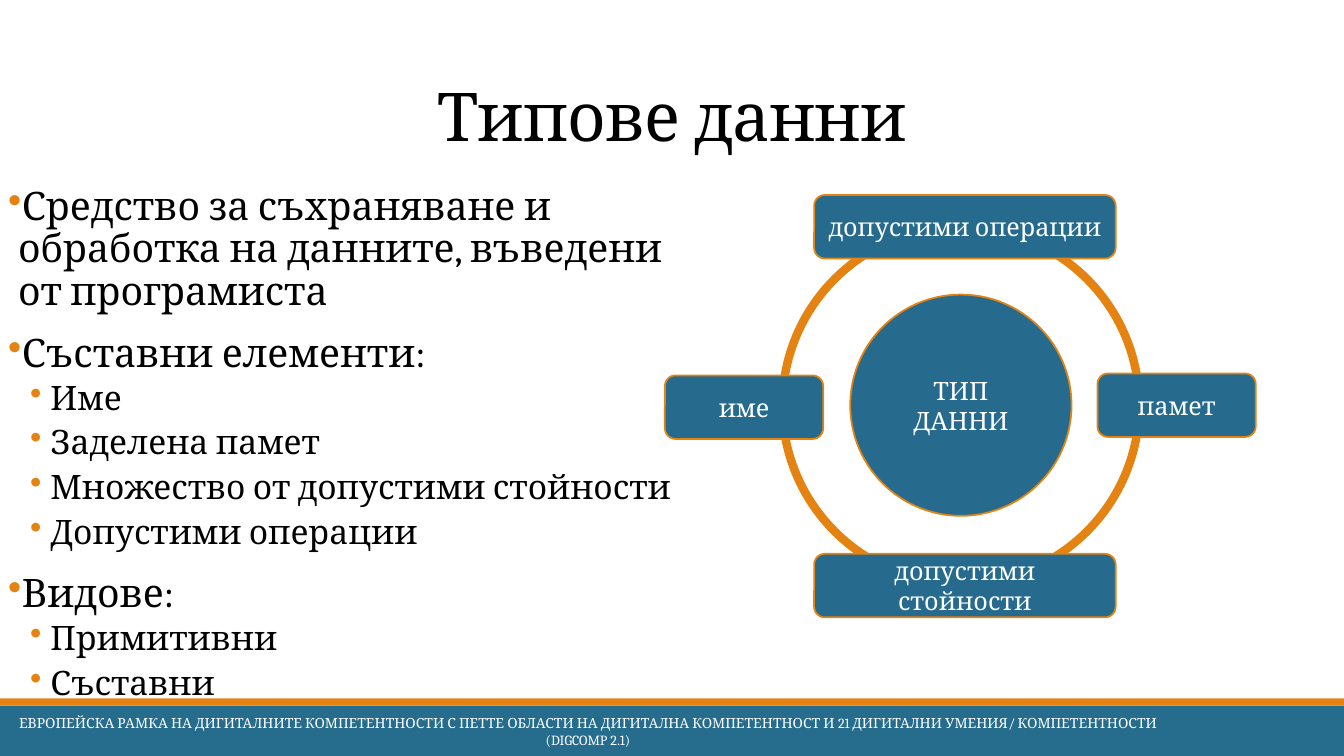
from collections import namedtuple

from lxml.etree import SubElement
from pptx import Presentation
from pptx.dml.color import RGBColor
from pptx.enum.shapes import MSO_SHAPE as Preset
from pptx.enum.text import MSO_ANCHOR as Anchor, PP_ALIGN as Align
from pptx.oxml.ns import qn
from pptx.util import Inches, Pt

WIDTH, HEIGHT = 13.33, 7.5
FONT = "Cambria"
COLORS = {
    "band": "256C8D", "stripe": "E48312", "node": "266B8D",
    "outline": "E58312", "dark": "000000", "light": "FFFFFF",
}
Box = namedtuple("Box", "left top width height")
# Indents in inches, sizes and spacing in points
Level = namedtuple("Level", "size margin indent before after")
LEVELS = [Level(28, 0.1, -0.16, 12, 2), Level(24, 0.42, -0.2, 2, 4)]

OUTLINE = [
    (0, "Средство за съхраняване и обработка на данните, въведени от програмиста"),
    (0, "Съставни елементи:"),
    (1, "Име"),
    (1, "Заделена памет"),
    (1, "Множество от допустими стойности"),
    (1, "Допустими операции"),
    (0, "Видове:"),
    (1, "Примитивни"),
    (1, "Съставни"),
]
FOOTER = ("ЕВРОПЕЙСКА РАМКА НА ДИГИТАЛНИТЕ КОМПЕТЕНТНОСТИ С ПЕТТЕ ОБЛАСТИ НА "
          "ДИГИТАЛНА КОМПЕТЕНТНОСТ И 21 ДИГИТАЛНИ УМЕНИЯ/ КОМПЕТЕНТНОСТИ (DIGCOMP 2.1)")
# Label, width, and offset of its centre from the ring's centre
RING_LABELS = [
    ("допустими операции", 2.99, 0.04, -1.77),
    ("допустими стойности", 2.99, 0.04, 1.79),
    ("памет", 1.57, 2.14, 0),
    ("име", 1.57, -2.15, 0.02),
]


def rgb(name):
    return RGBColor.from_string(COLORS[name])


def emu(box):
    return [Inches(length) for length in box]


def centred(x, y, width, height):
    return Box(x - width / 2, y - height / 2, width, height)


def add_run(para, text, size, color):
    run = para.add_run()
    run.text = text
    run.font.name = FONT
    run.font.size = Pt(size)
    run.font.color.rgb = rgb(color)
    return run


def add_text_frame(slide, box, anchor=Anchor.TOP, inset=None):
    frame = slide.shapes.add_textbox(*emu(box)).text_frame
    frame.word_wrap = True
    frame.vertical_anchor = anchor
    if inset is not None:
        frame.margin_left = frame.margin_right = Inches(inset)
        frame.margin_top = frame.margin_bottom = Inches(inset)
    return frame


def add_panel(slide, preset, box, fill=None, line=None, weight=1.25):
    shape = slide.shapes.add_shape(preset, *emu(box))
    shape.shadow.inherit = False
    if fill:
        shape.fill.solid()
        shape.fill.fore_color.rgb = rgb(fill)
    else:
        shape.fill.background()
    if line:
        shape.line.color.rgb = rgb(line)
        shape.line.width = Pt(weight)
    else:
        shape.line.fill.background()
    return shape


def add_node(slide, preset, box, text):
    frame = add_panel(slide, preset, box, "node", "outline").text_frame
    frame.word_wrap = True
    frame.vertical_anchor = Anchor.MIDDLE
    para = frame.paragraphs[0]
    para.alignment = Align.CENTER
    add_run(para, text, 18, "light")


def set_bullet(para, level):
    props = para._p.get_or_add_pPr()
    props.set("marL", str(Inches(level.margin)))
    props.set("indent", str(Inches(level.indent)))
    color = SubElement(props, qn("a:buClr"))
    SubElement(color, qn("a:srgbClr"), val=COLORS["stripe"])
    SubElement(props, qn("a:buChar"), char="•")


def add_title(slide, box):
    para = add_text_frame(slide, box, Anchor.BOTTOM).paragraphs[0]
    para.alignment = Align.CENTER
    para.line_spacing = 0.85
    run = add_run(para, "Типове данни", 48, "dark")
    run._r.get_or_add_rPr().set("spc", "-50")


def add_outline(slide, box):
    frame = add_text_frame(slide, box, inset=0.08)
    for index, (depth, text) in enumerate(OUTLINE):
        para = frame.add_paragraph() if index else frame.paragraphs[0]
        level = LEVELS[depth]
        para.level = depth
        set_bullet(para, level)
        para.line_spacing = 0.9
        para.space_before = Pt(level.before if index else 0)
        para.space_after = Pt(level.after)
        add_run(para, text, level.size, "dark")


def add_ring_diagram(slide, box):
    """Draw the ring filling the box, its core and the labels around it."""
    x, y = box.left + box.width / 2, box.top + box.height / 2
    add_panel(slide, Preset.OVAL, box, line="outline", weight=6)
    core = box.width * 0.62
    add_node(slide, Preset.OVAL, centred(x, y, core, core), "ТИП ДАННИ")
    for text, width, across, down in RING_LABELS:
        label = centred(x + across, y + down, width, 0.63)
        add_node(slide, Preset.ROUNDED_RECTANGLE, label, text)


def add_footer(slide, box):
    stripe = 0.07
    add_panel(slide, Preset.RECTANGLE,
              Box(box.left, box.top + stripe, box.width, box.height - stripe), "band")
    add_panel(slide, Preset.RECTANGLE, box._replace(height=stripe), "stripe")
    text_box = Box(box.left, box.top + 0.13, box.width * 0.875, 0.4)
    para = add_text_frame(slide, text_box, Anchor.MIDDLE, 0.04).paragraphs[0]
    para.alignment = Align.CENTER
    add_run(para, FOOTER, 10, "light")


def main():
    deck = Presentation()
    deck.slide_width, deck.slide_height = Inches(WIDTH), Inches(HEIGHT)
    slide = deck.slides.add_slide(deck.slide_layouts[6])
    slide.background.fill.solid()
    slide.background.fill.fore_color.rgb = rgb("light")
    add_footer(slide, Box(0, HEIGHT - 0.57, WIDTH, 0.57))
    add_title(slide, Box(0, 0, WIDTH, 1.59))
    add_outline(slide, Box(0, 1.77, 7.06, 5.05))
    add_ring_diagram(slide, Box(7.76, 2.25, 3.54, 3.54))
    deck.save("out.pptx")


if __name__ == "__main__":
    main()
